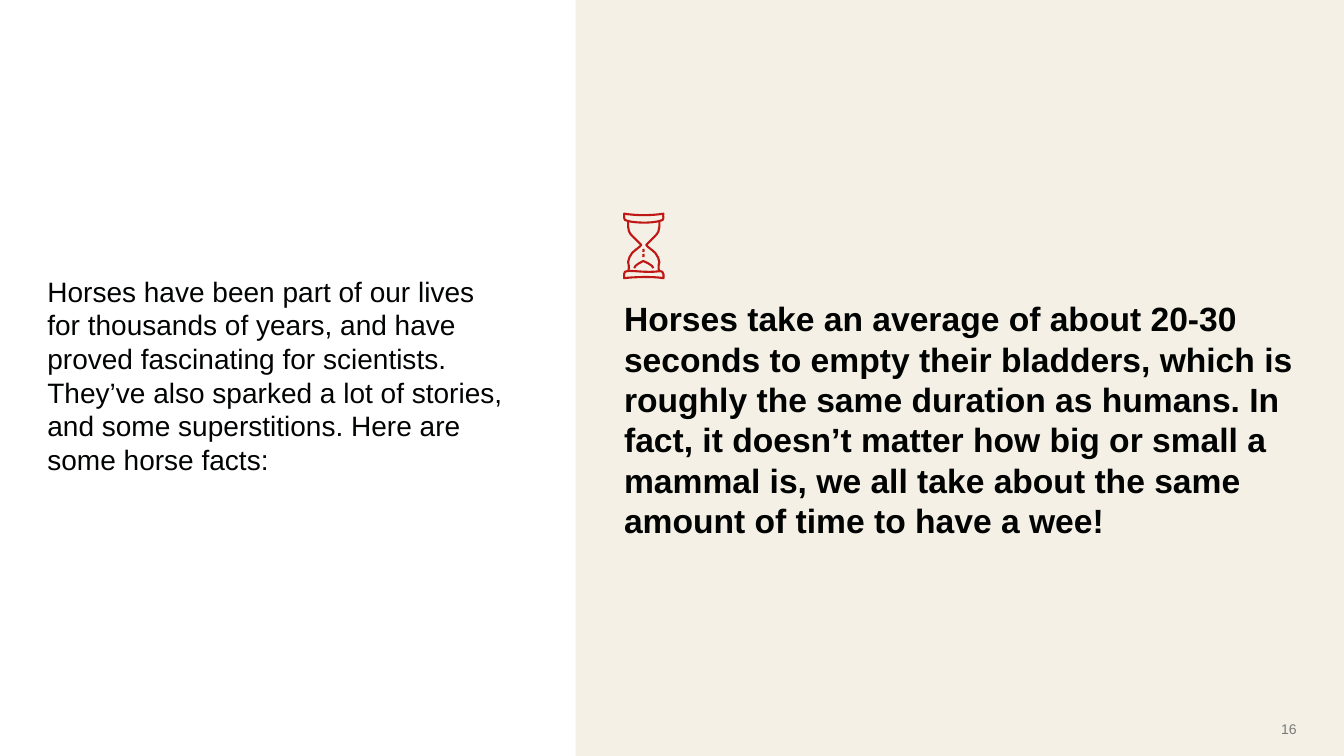
from lxml import etree
from pptx import Presentation
from pptx.dml.color import RGBColor
from pptx.enum import shapes, text
from pptx.oxml.ns import qn
from pptx.util import Inches, Pt

INK, SAND, RED, GREY = "010302", "F4F0E5", "BF1716", "797979"
ICON_AXIS = 6.385

# Hourglass curves: a start point, then three Bezier points per segment
GLASS_SIDE = [
    (6.54, 2.69), (6.53, 2.68), (6.53, 2.63), (6.54, 2.6),
    (6.54, 2.57), (6.52, 2.54), (6.5, 2.51),
    (6.46, 2.47), (6.42, 2.45), (6.41, 2.43),
    (6.43, 2.41), (6.46, 2.38), (6.5, 2.34),
    (6.53, 2.31), (6.54, 2.28), (6.54, 2.25),
    (6.54, 2.24), (6.54, 2.21), (6.54, 2.19)]
TOP_CAP = [
    (6.58, 2.12), (6.46, 2.14), (6.31, 2.14), (6.19, 2.12),
    (6.19, 2.13), (6.19, 2.15), (6.19, 2.16),
    (6.19, 2.18), (6.2, 2.19), (6.22, 2.19),
    (6.27, 2.21), (6.46, 2.22), (6.55, 2.19),
    (6.57, 2.19), (6.58, 2.18), (6.58, 2.16),
    (6.58, 2.15), (6.57, 2.13), (6.58, 2.12)]
BASE_CAP = [
    (6.55, 2.69), (6.4, 2.71), (6.28, 2.68), (6.22, 2.69),
    (6.2, 2.69), (6.19, 2.7), (6.19, 2.72),
    (6.19, 2.73), (6.19, 2.74), (6.19, 2.76),
    (6.25, 2.75), (6.48, 2.74), (6.58, 2.76),
    (6.58, 2.75), (6.58, 2.73), (6.58, 2.72),
    (6.58, 2.7), (6.56, 2.69), (6.55, 2.69)]
SAND_PILE = [
    (6.48, 2.66), (6.48, 2.63), (6.38, 2.59), (6.38, 2.59),
    (6.38, 2.59), (6.29, 2.63), (6.29, 2.66)]


def colour(hex_code):
    return RGBColor.from_string(hex_code)


def add_panel(slide, left, top, width, height, fill):
    panel = slide.shapes.add_shape(
        shapes.MSO_SHAPE.RECTANGLE,
        Inches(left), Inches(top), Inches(width), Inches(height))
    panel.shadow.inherit = False
    panel.fill.solid()
    panel.fill.fore_color.rgb = colour(fill)
    panel.line.fill.background()


def add_text(slide, left, top, width, height, words, size, ink=INK, bold=False,
             align=text.PP_ALIGN.LEFT, anchor=text.MSO_ANCHOR.TOP):
    frame = slide.shapes.add_textbox(
        Inches(left), Inches(top), Inches(width), Inches(height)).text_frame
    frame.word_wrap = True
    frame.auto_size = text.MSO_AUTO_SIZE.SHAPE_TO_FIT_TEXT
    frame.vertical_anchor = anchor
    frame.margin_left = frame.margin_right = 0
    frame.margin_top = frame.margin_bottom = 0
    paragraph = frame.paragraphs[0]
    paragraph.text = words
    paragraph.alignment = align
    for run in paragraph.runs:
        run.font.name = "Arial"
        run.font.size = Pt(size)
        run.font.bold = bold
        run.font.color.rgb = colour(ink)


def add_curve(group, controls, closed=False):
    points = [(Inches(x), Inches(y)) for x, y in controls]
    builder = group.shapes.build_freeform(*points[0])
    builder.add_line_segments(points[1:], close=closed)
    outline = builder.convert_to_shape()
    outline.shadow.inherit = False
    outline.fill.background()
    outline.line.color.rgb = colour(RED)
    outline.line.width = Pt(1.5)

    # Merge each three straight steps into one Bezier segment
    steps = list(outline._element.iter(qn("a:lnTo")))
    for first in range(0, len(steps), 3):
        bezier = etree.Element(qn("a:cubicBezTo"))
        steps[first].addprevious(bezier)
        for step in steps[first:first + 3]:
            bezier.append(step[0])
            step.getparent().remove(step)


def add_hourglass(slide):
    hourglass = slide.shapes.add_group_shape()
    add_curve(hourglass, GLASS_SIDE)
    add_curve(hourglass, [(2 * ICON_AXIS - x, y) for x, y in GLASS_SIDE])
    for cap in (TOP_CAP, BASE_CAP):
        add_curve(hourglass, cap, closed=True)
    add_curve(hourglass, SAND_PILE)
    # Falling grains
    for top in (2.47, 2.52):
        add_curve(hourglass, [(6.38, top), (6.38, top + 0.01),
                              (6.39, top + 0.02), (6.38, top + 0.03)])


def main():
    deck = Presentation()
    deck.slide_width, deck.slide_height = Inches(13.33), Inches(7.5)
    slide = deck.slides.add_slide(deck.slide_layouts[6])

    # Right-hand panel
    add_panel(slide, 5.71, 0, 7.62, 7.5, SAND)

    # Introduction and horse fact
    add_text(slide, 0.47, 2.72, 4.77, 1.68,
             "Horses have been part of our lives \nfor thousands of years, and have "
             "proved fascinating for scientists. They’ve also sparked a lot of "
             "stories, and some superstitions. Here are some horse facts:", 20)
    add_text(slide, 6.19, 2.96, 6.67, 2.42,
             "Horses take an average of about 20-30 seconds to empty their bladders, "
             "which is roughly the same duration as humans. In fact, it doesn’t "
             "matter how big or small a mammal is, we all take about the same amount "
             "of time to have a wee!", 24, bold=True)

    # Icon and page number
    add_hourglass(slide)
    add_text(slide, 12.01, 7.15, 0.85, 0.17, "16", 10, ink=GREY,
             align=text.PP_ALIGN.RIGHT, anchor=text.MSO_ANCHOR.MIDDLE)

    deck.save("out.pptx")


if __name__ == "__main__":
    main()
